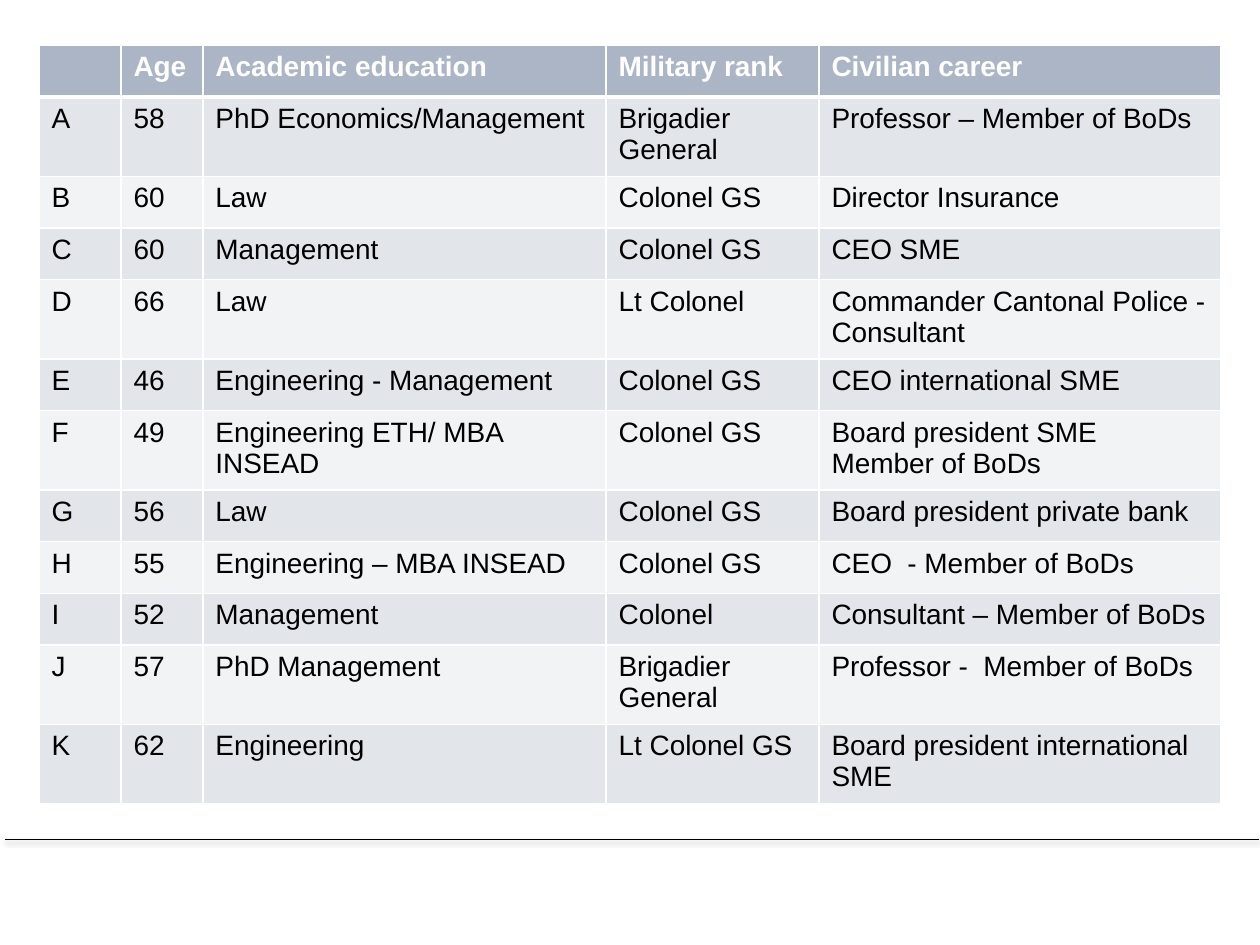
"""Builds a slide with a table of officers, their education, rank and civilian career."""
from dataclasses import dataclass

from lxml import etree
from pptx import Presentation
from pptx import util as u
from pptx.dml.color import RGBColor
from pptx.enum import shapes
from pptx.oxml import parse_xml
from pptx.oxml.ns import nsdecls, qn


@dataclass(frozen=True)
class Theme:
    font: str = "Arial"
    size: int = 16
    header: str = "ABB5C5"
    bands: tuple = ("E2E5EA", "F1F3F5")
    light: str = "FFFFFF"
    dark: str = "000000"
    shadow: str = "808080"
    border: int = 1
    header_border: int = 3
    rule: float = 0.25


THEME = Theme()
WIDTH, HEIGHT = 10, 7.5
LEFT, TOP = 0.31, 0.36
COLUMNS = (0.65, 0.65, 3.2, 1.69, 3.19)
ONE_LINE, TWO_LINES = 0.41, 0.63
TALL_ROWS = "ADFJK"
RULE_START, RULE_END, RULE_Y = 0.04, 9.99, 6.66

HEADER = ("", "Age", "Academic education", "Military rank", "Civilian career")
OFFICERS = [
    ("A", "58", "PhD Economics/Management", "Brigadier General", "Professor – Member of BoDs"),
    ("B", "60", "Law", "Colonel GS", "Director Insurance"),
    ("C", "60", "Management", "Colonel GS", "CEO SME"),
    ("D", "66", "Law", "Lt Colonel", "Commander Cantonal Police - Consultant"),
    ("E", "46", "Engineering - Management", "Colonel GS", "CEO international SME"),
    ("F", "49", "Engineering ETH/ MBA INSEAD", "Colonel GS", "Board president SME\nMember of BoDs"),
    ("G", "56", "Law", "Colonel GS", "Board president private bank"),
    ("H", "55", "Engineering – MBA INSEAD", "Colonel GS", "CEO  - Member of BoDs"),
    ("I", "52", "Management", "Colonel", "Consultant – Member of BoDs"),
    ("J", "57", "PhD Management", "Brigadier General", "Professor -  Member of BoDs"),
    ("K", "62", "Engineering", "Lt Colonel GS", "Board president international SME"),
]


def color(value):
    return RGBColor.from_string(value)


def set_borders(cell, top, bottom):
    properties = cell._tc.get_or_add_tcPr()
    widths = {"lnL": THEME.border, "lnR": THEME.border, "lnT": top, "lnB": bottom}
    for position, (side, width) in enumerate(widths.items()):
        properties.insert(position, parse_xml(
            f'<a:{side} {nsdecls("a")} w="{u.Pt(width)}"><a:solidFill>'
            f'<a:srgbClr val="{THEME.light}"/></a:solidFill></a:{side}>'))


def fill_cell(cell, content, row):
    is_header = row == 0
    cell.text = content
    cell.fill.solid()
    cell.fill.fore_color.rgb = color(THEME.header if is_header else THEME.bands[(row - 1) % 2])
    for para in cell.text_frame.paragraphs:
        para.font.name = THEME.font
        para.font.size = u.Pt(THEME.size)
        para.font.bold = is_header
        para.font.color.rgb = color(THEME.light if is_header else THEME.dark)
    set_borders(cell,
                THEME.header_border if row == 1 else THEME.border,
                THEME.header_border if is_header else THEME.border)


def add_rule(page):
    rule = page.shapes.add_connector(
        shapes.MSO_CONNECTOR.STRAIGHT, u.Inches(RULE_START), u.Inches(RULE_Y),
        u.Inches(RULE_END), u.Inches(RULE_Y))
    rule.line.color.rgb = color(THEME.dark)
    rule.line.width = u.Pt(THEME.rule)
    effects = etree.SubElement(rule._element.spPr, qn("a:effectLst"))
    effects.append(parse_xml(
        f'<a:outerShdw {nsdecls("a")} blurRad="40000" dist="20000" dir="5400000" rotWithShape="0">'
        f'<a:srgbClr val="{THEME.shadow}"><a:alpha val="38000"/></a:srgbClr></a:outerShdw>'))


def add_officer_table(page):
    rows = [HEADER] + OFFICERS
    heights = [TWO_LINES if row[0] and row[0] in TALL_ROWS else ONE_LINE for row in rows]
    table = page.shapes.add_table(
        len(rows), len(COLUMNS), u.Inches(LEFT), u.Inches(TOP),
        u.Inches(sum(COLUMNS)), u.Inches(sum(heights))).table
    for column, width in zip(table.columns, COLUMNS):
        column.width = u.Inches(width)
    for index, (values, height) in enumerate(zip(rows, heights)):
        table.rows[index].height = u.Inches(height)
        for cell, content in zip(table.rows[index].cells, values):
            fill_cell(cell, content, index)


def main():
    deck = Presentation()
    deck.slide_width, deck.slide_height = u.Inches(WIDTH), u.Inches(HEIGHT)
    page = deck.slides.add_slide(deck.slide_layouts[6])
    add_rule(page)
    add_officer_table(page)
    deck.save("out.pptx")


if __name__ == "__main__":
    main()
